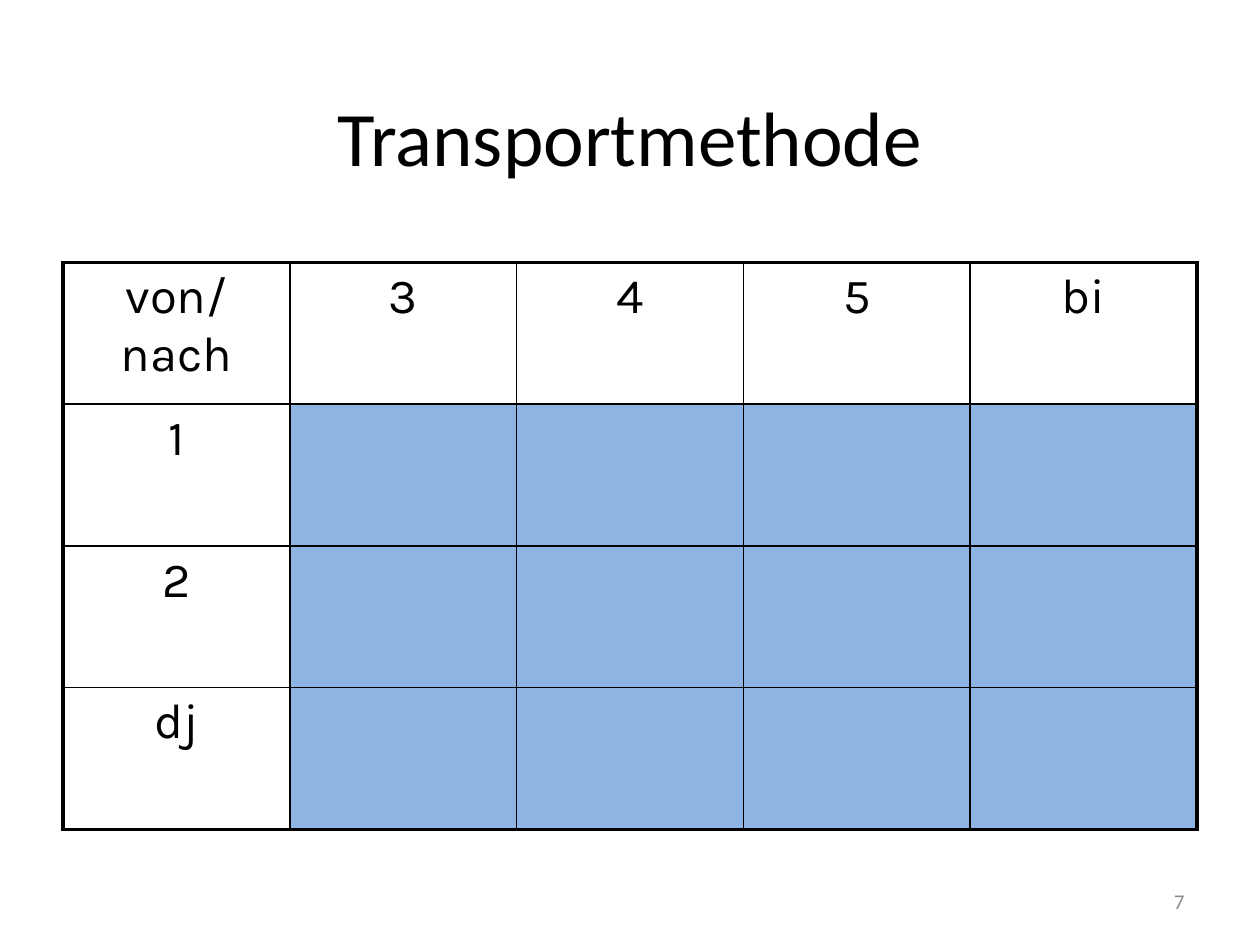
from lxml.etree import SubElement
from pptx import Presentation
from pptx.dml.color import RGBColor
from pptx.enum.text import MSO_ANCHOR, PP_ALIGN
from pptx.oxml.ns import qn
from pptx.util import Pt

BLACK, WHITE, BLUE, GREY = "000000", "FFFFFF", "8EB4E3", "8C8C8C"
HEAD = ["von/nach", "3", "4", "5", "bi"]
SIDE = ["1", "2", "dj"]
ROWS = [HEAD] + [[name] + [""] * (len(HEAD) - 1) for name in SIDE]


def color(code):
    return RGBColor.from_string(code)


def style(para, font, size, code, align):
    para.alignment = align
    para.font.size = Pt(size)
    for run in para.runs:
        run.font.name = font
        run.font.size = Pt(size)
        run.font.color.rgb = color(code)


def add_title(slide, text, left, top, width, height):
    title = slide.shapes.title
    title.left, title.top = Pt(left), Pt(top)
    title.width, title.height = Pt(width), Pt(height)
    frame = title.text_frame
    frame.text = text
    frame.vertical_anchor = MSO_ANCHOR.MIDDLE
    style(frame.paragraphs[0], "Calibri", 44, BLACK, PP_ALIGN.CENTER)


def add_edge(cell, side, width):
    line = SubElement(cell._tc.get_or_add_tcPr(), qn("a:ln" + side),
                      w=str(Pt(width)))
    fill = SubElement(line, qn("a:solidFill"))
    SubElement(fill, qn("a:srgbClr"), val=BLACK)


def add_grid(slide, rows, left, top, width, height):
    count, span = len(rows), len(rows[0])
    frame = slide.shapes.add_table(count, span, Pt(left), Pt(top),
                                   Pt(width), Pt(height))
    table = frame.table
    table.first_row = table.horz_banding = False
    for col in table.columns:
        col.width = Pt(width / span)
    for row in table.rows:
        row.height = Pt(height / count)

    for r, words in enumerate(rows):
        for c, word in enumerate(words):
            cell = table.cell(r, c)
            # Thick outer frame, thin inner lines
            outer = {"L": c == 0, "R": c == span - 1,
                     "T": r == 0, "B": r == count - 1}
            for side, thick in outer.items():
                add_edge(cell, side, 2.25 if thick else 1)
            # Blue field for the values, white labels
            cell.fill.solid()
            cell.fill.fore_color.rgb = color(BLUE if r and c else WHITE)
            if word:
                cell.text_frame.text = word
                para = cell.text_frame.paragraphs[0]
                style(para, "Karla", 28, BLACK, PP_ALIGN.CENTER)
                # Space before as a share of the line
                gap = para._p.get_or_add_pPr().get_or_add_spcBef()
                SubElement(gap, qn("a:spcPct"), val="20000")


def add_number(slide, text, left, top, width, height):
    box = slide.shapes.add_textbox(Pt(left), Pt(top), Pt(width), Pt(height))
    frame = box.text_frame
    frame.word_wrap = True
    frame.vertical_anchor = MSO_ANCHOR.MIDDLE
    frame.text = text
    style(frame.paragraphs[0], "Calibri", 12, GREY, PP_ALIGN.RIGHT)


def main():
    deck = Presentation()
    deck.slide_width, deck.slide_height = Pt(720), Pt(540)
    slide = deck.slides.add_slide(deck.slide_layouts[5])
    add_title(slide, "Transportmethode", 36, 23, 648, 109)
    add_grid(slide, ROWS, 36, 150, 648, 324)
    add_number(slide, "7", 516, 500.5, 168, 28.75)
    deck.save("out.pptx")


if __name__ == "__main__":
    main()
